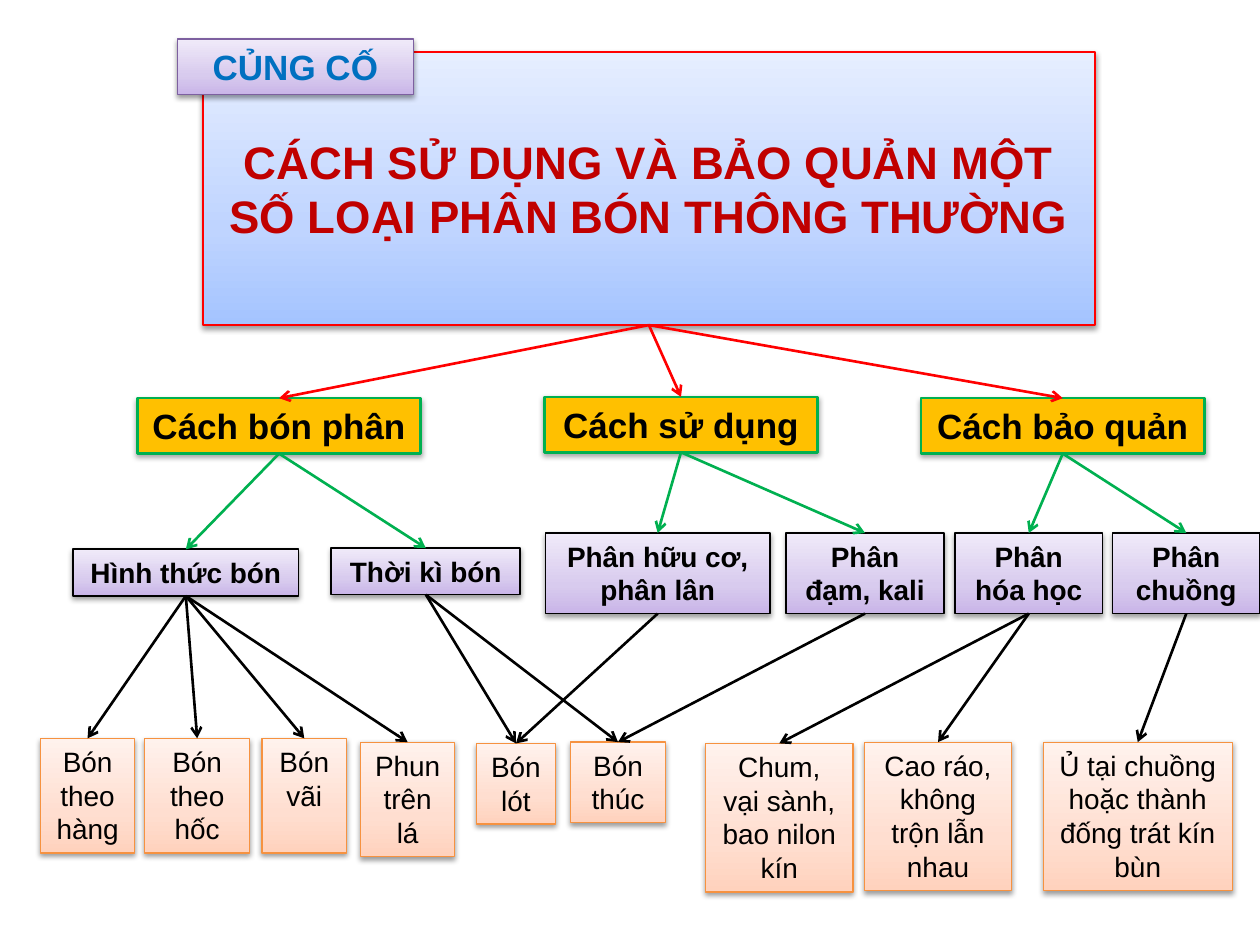
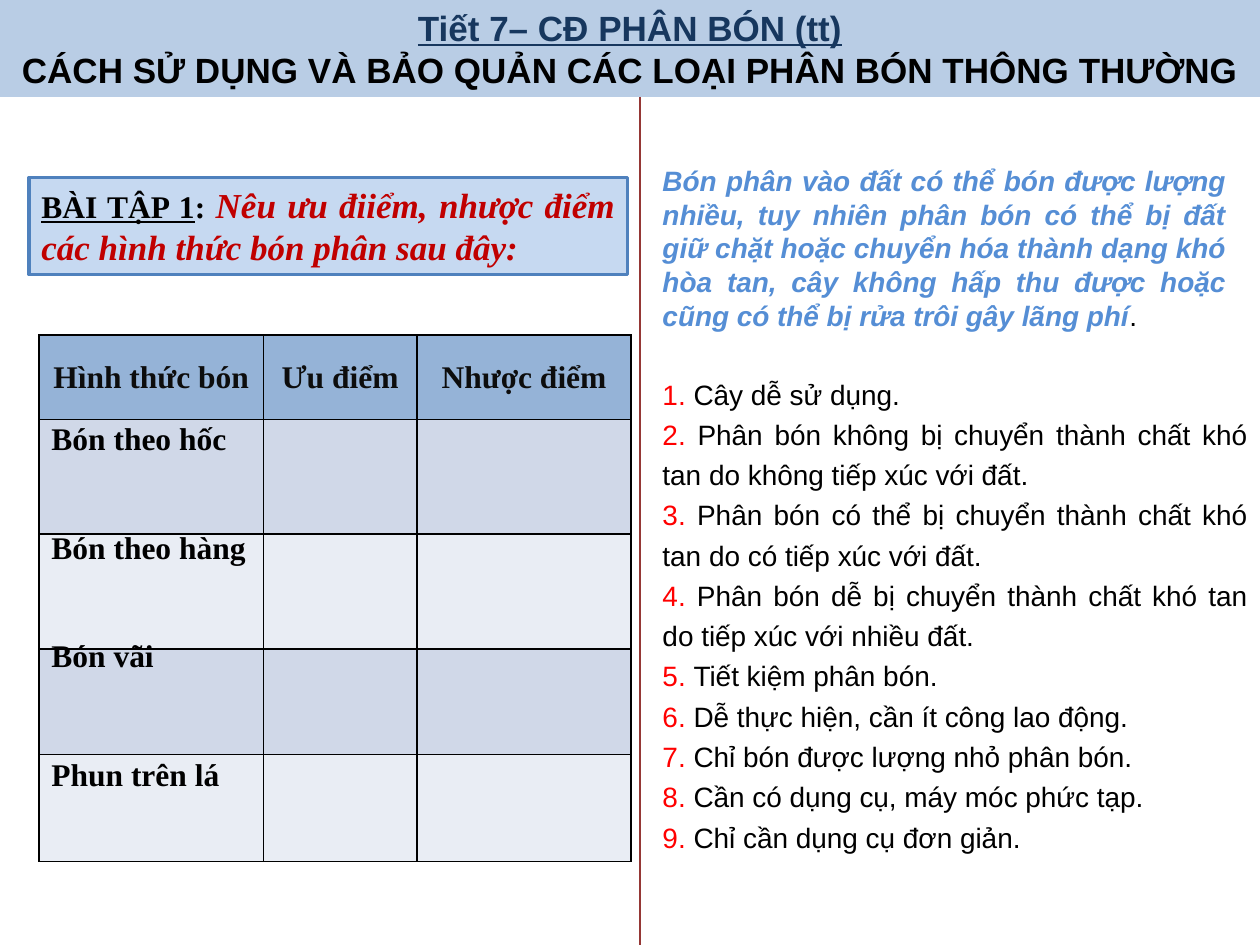
import copy

import pptx
import pptx.dml.color
import pptx.enum.shapes
import pptx.enum.text
import pptx.oxml
import pptx.oxml.ns
import pptx.util

Inches = pptx.util.Inches
qn = pptx.oxml.ns.qn
ALIGN = pptx.enum.text.PP_ALIGN
ANCHOR = pptx.enum.text.MSO_ANCHOR
FIT = pptx.enum.text.MSO_AUTO_SIZE

SANS, SERIF = "Arial", "Times New Roman"
BLACK, RED, DARK_RED, GREEN = "000000", "FF0000", "C00000", "00B050"
AMBER, WINE, NAVY, BAND_BLUE = "FFC000", "953735", "17375E", "B9CDE5"
# Gradients run from the bottom edge to the top edge.
BLUE_FADE = ("A4C4FF", "BFD4FF", "E6EEFF")
VIOLET_FADE = ("C9B5E8", "D8CBEE", "F0EAF9")
PEACH_FADE = ("FFD2BD", "FFDED0", "FFF2ED")


def rgb(color):
    return pptx.dml.color.RGBColor.from_string(color)


def xml(markup):
    """Parse one element of the drawing namespace."""
    head, tail = markup.split(">", 1) if "/>" not in markup.split(">")[0] + ">" else (markup[:-2], None)
    namespace = ' xmlns:a="http://schemas.openxmlformats.org/drawingml/2006/main"'
    return pptx.oxml.parse_xml(head + namespace + ("/>" if tail is None else ">" + tail))


def add_run(paragraph, text, size=16, font=SANS, color=BLACK,
            bold=False, italic=False, underline=False):
    run = paragraph.add_run()
    run.text = text
    run.font.size = pptx.util.Pt(size)
    run.font.name = font
    run.font.color.rgb = rgb(color)
    run.font.bold, run.font.italic, run.font.underline = bold, italic, underline


def write(frame, paragraphs, align=ALIGN.LEFT, spacing=None, **style):
    """Fill a frame; a paragraph is a string or a list of (text, format) runs."""
    for index, content in enumerate(paragraphs):
        paragraph = frame.add_paragraph() if index else frame.paragraphs[0]
        paragraph.alignment = align
        if spacing:
            paragraph.line_spacing = spacing
        runs = [(content, {})] if isinstance(content, str) else content
        for text, own in runs:
            add_run(paragraph, text, **{**style, **own})


def paint(shape, fill, line=None, width=0.75, shadow=None):
    """Set fill (a colour or a three-stop fade), outline and soft shadow."""
    if isinstance(fill, str):
        shape.fill.solid()
        shape.fill.fore_color.rgb = rgb(fill)
    else:
        shape.fill.gradient()
        shape.fill.gradient_angle = 90
        stops = shape._element.spPr.find(qn("a:gradFill")).find(qn("a:gsLst"))
        stops.append(copy.deepcopy(stops[0]))
        for stop, position, color in zip(shape.fill.gradient_stops, (0, 0.35, 1), fill):
            stop.position = position
            stop.color.rgb = rgb(color)
    if line:
        shape.line.color.rgb = rgb(line)
        shape.line.width = pptx.util.Pt(width)
    else:
        shape.line.fill.background()
    shape.shadow.inherit = False
    if shadow:
        effects = shape._element.spPr.find(qn("a:effectLst"))
        effects.append(xml(
            f'<a:outerShdw blurRad="{pptx.util.Pt(3.1)}" dist="{pptx.util.Pt(1.6)}" dir="5400000">'
            f'<a:srgbClr val="{BLACK}"><a:alpha val="{shadow * 1000}"/></a:srgbClr></a:outerShdw>'))


class Deck:
    """Holds the presentation, its shared style and the current slide."""

    def __init__(self):
        self.file = pptx.Presentation()
        self.file.slide_width, self.file.slide_height = Inches(10), Inches(7.5)

    def new_slide(self):
        self.slide = self.file.slides.add_slide(self.file.slide_layouts[5])

    def title(self, at, paragraphs, preset="rect", size=20, color=BLACK, **look):
        heading = self.slide.shapes.title
        heading.left, heading.top, heading.width, heading.height = map(Inches, at)
        heading._element.spPr.append(xml(f'<a:prstGeom prst="{preset}"><a:avLst/></a:prstGeom>'))
        paint(heading, **look)
        frame = heading.text_frame
        frame.auto_size = FIT.NONE
        frame.vertical_anchor = ANCHOR.MIDDLE
        write(frame, paragraphs, ALIGN.CENTER, size=size, color=color, bold=True)
        return heading

    def box(self, at, paragraphs, look, align=ALIGN.CENTER, **style):
        shape = self.slide.shapes.add_shape(
            pptx.enum.shapes.MSO_SHAPE.RECTANGLE, *map(Inches, at))
        paint(shape, **look)
        self.fill_frame(shape.text_frame, paragraphs, align=align, **style)
        return shape

    def text(self, at, paragraphs, **style):
        self.fill_frame(self.slide.shapes.add_textbox(*map(Inches, at)).text_frame,
                        paragraphs, **style)

    def fill_frame(self, frame, paragraphs, **style):
        frame.word_wrap = True
        frame.auto_size = FIT.SHAPE_TO_FIT_TEXT
        frame.vertical_anchor = ANCHOR.TOP
        write(frame, paragraphs, **style)

    def line(self, start, end, color, width=0.75, arrow=False):
        connector = self.slide.shapes.add_connector(
            pptx.enum.shapes.MSO_CONNECTOR.STRAIGHT, *start, *end)
        connector.line.color.rgb = rgb(color)
        connector.line.width = pptx.util.Pt(width)
        properties = connector._element.spPr
        if arrow:
            properties.find(qn("a:ln")).append(xml('<a:tailEnd type="arrow"/>'))
        properties.append(xml("<a:effectLst/>"))

    def branch(self, parent, child, color, shift=0):
        """Arrow from the bottom centre of parent to the top centre of child."""
        self.line((parent.left + parent.width // 2, parent.top + parent.height),
                  (child.left + child.width // 2 + Inches(shift), child.top),
                  color, 1.5, arrow=True)

    def table(self, at, widths, heights, header, row_fills):
        grid = self.slide.shapes.add_table(
            len(heights), len(widths), *map(Inches, at)).table
        for column, width in zip(grid.columns, widths):
            column.width = Inches(width)
        for row, height, fill in zip(grid.rows, heights, row_fills):
            row.height = Inches(height)
            for cell in row.cells:
                cell.fill.solid()
                cell.fill.fore_color.rgb = rgb(fill)
                for index, side in enumerate("LRTB"):
                    cell._tc.get_or_add_tcPr().insert(index, xml(
                        f'<a:ln{side} w="12700"><a:solidFill><a:srgbClr val="{BLACK}"/>'
                        f'</a:solidFill></a:ln{side}>'))
        for cell, label in zip(grid.rows[0].cells, header):
            cell.vertical_anchor = ANCHOR.MIDDLE
            write(cell.text_frame, [label], ALIGN.CENTER,
                  size=18, font=SERIF, color="0D0D0D", bold=True)


def summary_slide(deck):
    deck.new_slide()
    topic = deck.title(
        (1.61, 0.41, 7.08, 2.17),
        ["CÁCH SỬ DỤNG VÀ BẢO QUẢN MỘT SỐ LOẠI PHÂN BÓN THÔNG THƯỜNG"],
        preset="ellipse", size=26, color=DARK_RED,
        fill=BLUE_FADE, line=RED, width=1, shadow=38)
    deck.box((1.41, 0.31, 1.87, 0.44), ["CỦNG CỐ"],
             dict(fill=VIOLET_FADE, line="7D60A0", shadow=38),
             size=20, color="0070C0", bold=True)

    theme_look = dict(fill=AMBER, line=GREEN, width=1.5, shadow=35)
    group_look = dict(fill=VIOLET_FADE, line=BLACK, width=1, shadow=38)
    detail_look = dict(fill=PEACH_FADE, line="F69240", shadow=38)
    themes = {
        "Cách bón phân": (1.09, 3.16, 2.25, 0.44),
        "Cách sử dụng": (4.32, 3.15, 2.17, 0.44),
        "Cách bảo quản": (7.31, 3.16, 2.25, 0.44),
    }
    groups = {
        "Hình thức bón": (0.58, 4.36, 1.79, 0.37),
        "Thời kì bón": (2.63, 4.35, 1.5, 0.37),
        "Phân hữu cơ, phân lân": (4.33, 4.23, 1.78, 0.64),
        "Phân đạm, kali": (6.24, 4.23, 1.25, 0.64),
        "Phân hóa học": (7.58, 4.23, 1.17, 0.64),
        "Phân chuồng": (8.83, 4.23, 1.17, 0.64),
    }
    details = {
        "Bón theo hàng": (0.32, 5.86, 0.75, 0.91),
        "Bón theo hốc": (1.15, 5.86, 0.83, 0.91),
        "Bón vãi": (2.08, 5.86, 0.67, 0.91),
        "Phun trên lá": (2.86, 5.89, 0.75, 0.91),
        "Bón lót": (3.78, 5.9, 0.63, 0.64),
        "Bón thúc": (4.53, 5.89, 0.75, 0.64),
        "Chum, vại sành, bao nilon kín": (5.6, 5.9, 1.17, 1.18),
        "Cao ráo,\nkhông trộn lẫn nhau": (6.86, 5.89, 1.17, 1.18),
        "Ủ tại chuồng hoặc thành đống trát kín bùn": (8.28, 5.89, 1.5, 1.18),
    }

    def place(items, look, **style):
        return [deck.box(at, label.split("\n"), look, **style) for label, at in items.items()]

    theme_boxes = place(themes, theme_look, size=20, bold=True)
    group_boxes = place(groups, group_look, bold=True)
    detail_boxes = place(details, detail_look)

    for index, theme in enumerate(theme_boxes):
        deck.branch(topic, theme, RED)
        for group in group_boxes[2 * index:2 * index + 2]:
            deck.branch(theme, group, GREEN)
    details_of_group = [(0, 1, 2, 3), (4, 5), (4,), (5,), (6, 7), (8,)]
    for group, targets in zip(group_boxes, details_of_group):
        for target in targets:
            deck.branch(group, detail_boxes[target], BLACK)


def exercise_slide(deck):
    deck.new_slide()
    deck.title((0, 0, 10, 0.77), [
        [("Tiết 7– CĐ PHÂN BÓN (tt)", dict(color=NAVY, underline=True))],
        "CÁCH SỬ DỤNG VÀ BẢO QUẢN CÁC LOẠI PHÂN BÓN THÔNG THƯỜNG",
    ], fill=BAND_BLUE)
    deck.line((Inches(5.08), Inches(0.77)), (Inches(5.08), Inches(7.5)), WINE)

    question = dict(size=20, color=DARK_RED, italic=True)
    deck.box((0.23, 1.41, 4.75, 0.77), [[
        ("BÀI TẬP 1", dict(underline=True)),
        (": ", {}),
        ("Nêu ưu điiểm, nhược điểm các hình thức bón phân sau đây:", question),
    ]], dict(fill="C6D9F1", line="4F81BD", width=2),
        align=ALIGN.JUSTIFY, size=18, font=SERIF, bold=True)

    deck.table((0.31, 2.66, 4.7, 4.18), (1.78, 1.22, 1.7), (0.67, 0.91, 0.91, 0.84, 0.85),
               ("Hình thức bón", "Ưu điểm", "Nhược điểm"),
               ["95B3D7"] + ["D0D8E8", "E9EDF4"] * 2)
    methods = {"Bón theo hốc": 3.28, "Bón theo hàng": 4.14, "Bón vãi": 5, "Phun trên lá": 5.94}
    for method, top in methods.items():
        deck.text((0.31, top, 1.75, 0.4), [method], size=18, font=SERIF, bold=True)

    deck.text((5.16, 1.25, 4.67, 1.45), [[
        ("Bón phân vào đất có thể bón được lượng nhiều, tuy nhiên phân bón có thể bị đất "
         "giữ chặt hoặc chuyển hóa thành dạng khó hòa tan, cây không hấp thu được hoặc "
         "cũng có thể bị rửa trôi gây lãng phí", dict(color="558ED5", bold=True, italic=True)),
        (".", {}),
    ]], align=ALIGN.JUSTIFY)
    choices = [
        "Cây dễ sử dụng.",
        "Phân bón không bị chuyển thành chất khó tan do không tiếp xúc với đất.",
        "Phân bón có thể bị chuyển thành chất khó tan do có tiếp xúc với đất.",
        "Phân bón dễ bị chuyển thành chất khó tan do tiếp xúc với nhiều đất.",
        "Tiết kiệm phân bón.",
        "Dễ thực hiện, cần ít công lao động.",
        "Chỉ bón được lượng nhỏ phân bón.",
        "Cần có dụng cụ, máy móc phức tạp.",
        "Chỉ cần dụng cụ đơn giản.",
    ]
    deck.text((5.16, 2.89, 4.84, 3.98),
              [[(f"{number}. ", dict(color=RED)), (choice, {})]
               for number, choice in enumerate(choices, 1)],
              align=ALIGN.JUSTIFY, spacing=1.2)


def main():
    deck = Deck()
    summary_slide(deck)
    exercise_slide(deck)
    deck.file.save("out.pptx")


if __name__ == "__main__":
    main()
